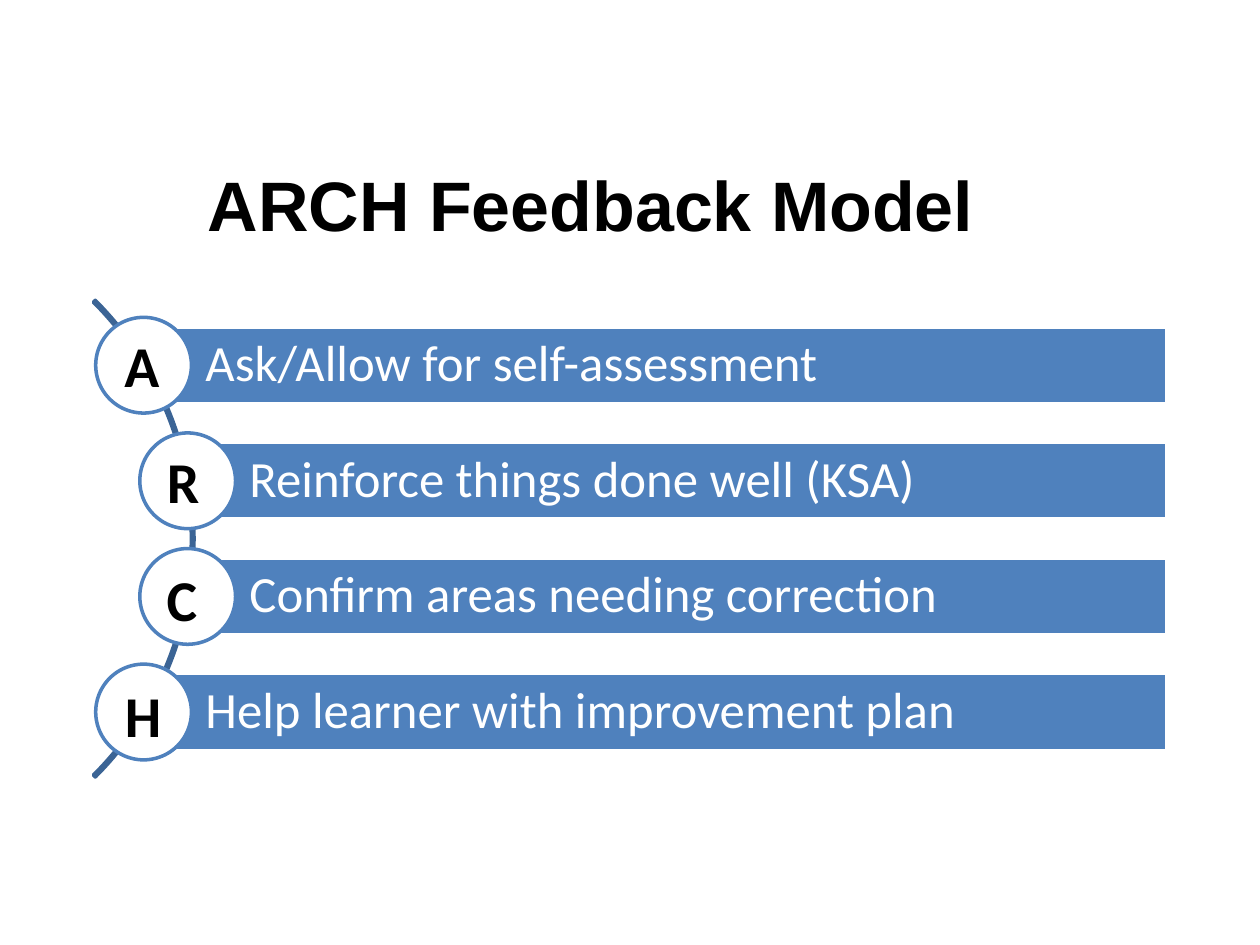
from pptx import Presentation
from pptx import util as u
from pptx.dml.color import RGBColor
from pptx.enum import shapes, text

BLUE, DARK_BLUE, WHITE, BLACK = "4F81BD", "3B6495", "FFFFFF", "000000"
# letter, statement, step to the right, offset of the letter box in its circle
STEPS = [
    ("A ", "Ask/Allow for self-assessment", 0, (0.11, 0.12)),
    ("R ", "Reinforce things done well (KSA)", 0.35, (0.14, 0.12)),
    ("C ", "Confirm areas needing correction", 0.35, (0.13, 0.14)),
    ("H ", "Help learner with improvement plan", 0, (0.12, 0.14)),
]
CIRCLE, BAR_HEIGHT, ARC = 0.76, 0.61, 5.35


def colour(value):
    return RGBColor.from_string(value)


def inches(*lengths):
    return [u.Inches(length) for length in lengths]


def write(shape, wording, margins, font, align, spacing=None):
    frame = shape.text_frame
    frame.text = wording
    sides = ("margin_left", "margin_top", "margin_right", "margin_bottom")
    settings = dict(zip(sides, inches(*margins)))
    settings |= {"word_wrap": True, "auto_size": text.MSO_AUTO_SIZE.NONE,
                 "vertical_anchor": text.MSO_ANCHOR.MIDDLE}
    for key, value in settings.items():
        setattr(frame, key, value)
    paragraph = frame.paragraphs[0]
    paragraph.alignment = align
    paragraph.line_spacing = spacing
    name, size, bold, ink = font
    run_font = paragraph.runs[0].font
    for key, value in {"name": name, "size": u.Pt(size), "bold": bold}.items():
        setattr(run_font, key, value)
    run_font.color.rgb = colour(ink)


def add_outlined(slide, preset, box, line, fill=None):
    shape = slide.shapes.add_shape(preset, *inches(*box))
    shape.shadow.inherit = False
    shape.line.color.rgb = colour(line)
    shape.line.width = u.Pt(2)
    if fill:
        shape.fill.solid()
        shape.fill.fore_color.rgb = colour(fill)
    else:
        shape.fill.background()
    return shape


def add_title(slide, box):
    title = slide.shapes.title
    title.left, title.top, title.width, title.height = inches(*box)
    write(title, "ARCH Feedback Model ", (0.1, 0.05, 0.1, 0.05),
          ("Arial", 40, True, BLACK), text.PP_ALIGN.CENTER)


def add_arc(slide, right, middle):
    arc = add_outlined(slide, shapes.MSO_SHAPE.BLOCK_ARC,
                       (right - ARC, middle - ARC / 2, ARC, ARC), DARK_BLUE)
    # start and end angle in units of 100000, then the band's thickness
    for index, value in enumerate((189, 27, 0.004)):
        arc.adjustments[index] = value


def add_step(slide, box, statement):
    """Bar whose left edge runs through the centre of its circle."""
    left, top, width, height = box
    middle, radius = top + height / 2, CIRCLE / 2
    bar = add_outlined(slide, shapes.MSO_SHAPE.RECTANGLE,
                       (left + radius, middle - BAR_HEIGHT / 2, width - radius, BAR_HEIGHT),
                       WHITE, BLUE)
    write(bar, statement, (0.49, 0.08, 0.08, 0.08),
          ("Calibri", 29, False, WHITE), text.PP_ALIGN.LEFT, 0.9)
    add_outlined(slide, shapes.MSO_SHAPE.OVAL,
                 (left, middle - radius, CIRCLE, CIRCLE), BLUE, WHITE)


def add_letter(slide, left, middle, letter, offset):
    across, down = offset
    label = slide.shapes.add_textbox(
        *inches(left + across, middle - CIRCLE / 2 + down, 0.51, 0.58))
    write(label, letter, (0.07, 0.04, 0.07, 0.04),
          ("Calibri", 33, True, BLACK), text.PP_ALIGN.CENTER, 0.9)


def add_arch_diagram(slide, box):
    left, top, width, height = box
    row = height / len(STEPS)
    add_arc(slide, left + 0.78, top + height / 2)
    for index, (letter, statement, shift, offset) in enumerate(STEPS):
        row_top = top + index * row
        add_step(slide, (left + shift, row_top, width - shift, row), statement)
        add_letter(slide, left + shift, row_top + row / 2, letter, offset)


def main():
    deck = Presentation()
    deck.slide_width, deck.slide_height = inches(10, 7.5)
    slide = deck.slides.add_slide(deck.slide_layouts[5])
    add_title(slide, (0.69, 1.07, 8.15, 1.09))
    add_arch_diagram(slide, (0.76, 2.44, 8.5, 3.67))
    deck.save("out.pptx")


if __name__ == "__main__":
    main()
